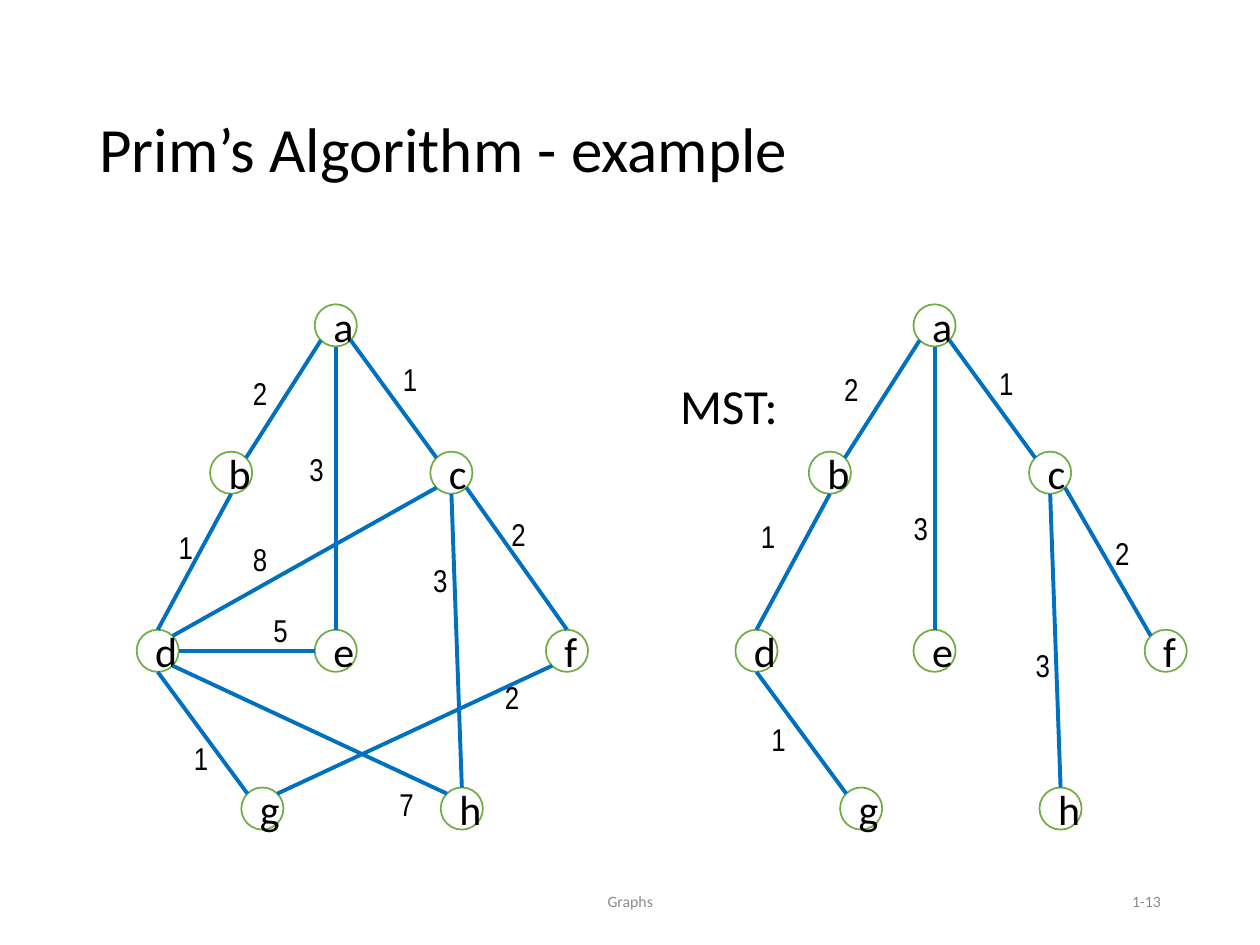
from math import cos, radians, sin

from lxml import etree
from pptx import Presentation
from pptx import util as u
from pptx.dml.color import RGBColor
from pptx.enum import shapes, text
from pptx.oxml import ns

BLACK = RGBColor(0x00, 0x00, 0x00)
WHITE = RGBColor(0xFF, 0xFF, 0xFF)
GRAY = RGBColor(0x8C, 0x8C, 0x8C)
GREEN = RGBColor(0x70, 0xAD, 0x47)
BLUE = RGBColor(0x00, 0x70, 0xC0)

DIAMETER = 0.85
MST_OFFSET = 12.07
LEFT, CENTER, RIGHT = text.PP_ALIGN.LEFT, text.PP_ALIGN.CENTER, text.PP_ALIGN.RIGHT
MIDDLE = text.MSO_ANCHOR.MIDDLE

NODES = {
    "a": (6.77, 6.56),
    "b": (4.66, 9.53),
    "c": (9.1, 9.53),
    "d": (3.18, 13.12),
    "e": (6.77, 13.12),
    "f": (11.43, 13.12),
    "g": (5.29, 16.3),
    "h": (9.31, 16.3),
}
ANGLES = {name: 45 * step for step, name in enumerate(("E", "SE", "S", "SW", "W", "NW", "N", "NE"))}

GRAPH_EDGES = [
    ("a", "SE", "c", "NW", "1", 7.87, 7.14),
    ("a", "SW", "b", "NE", "2", 4.85, 7.42),
    ("a", "S", "e", "N", "3", 5.99, 8.94),
    ("b", "S", "d", "N", "1", 3.35, 10.52),
    ("c", "SE", "f", "N", "2", 10.06, 10.26),
    ("c", "SW", "d", "NE", "8", 4.85, 10.77),
    ("c", "S", "h", "N", "3", 8.48, 11.18),
    ("e", "W", "d", "E", "5", 5.26, 12.19),
    ("d", "S", "g", "NW", "1", 3.66, 14.78),
    ("d", "SE", "h", "NW", "7", 7.8, 15.7),
    ("f", "SW", "g", "NE", "2", 9.93, 13.54),
]
MST_EDGES = [
    ("a", "SE", "c", "NW", "1", 7.82, 7.21),
    ("a", "SW", "b", "NE", "2", 4.7, 7.34),
    ("a", "S", "e", "N", "3", 6.1, 10.13),
    ("b", "S", "d", "N", "1", 3.02, 10.29),
    ("c", "SE", "f", "NW", "2", 10.16, 10.64),
    ("c", "S", "h", "N", "3", 8.56, 12.9),
    ("d", "S", "g", "NW", "1", 3.23, 14.4),
]


def write(frame, words, size, font="Calibri", color=BLACK, align=LEFT):
    frame.text = words
    para = frame.paragraphs[0]
    para.alignment = align
    span = para.runs[0]
    span.font.size = u.Pt(size)
    span.font.name = font
    span.font.color.rgb = color
    return para


def add_title(page, words):
    title = page.shapes.title
    title.left, title.top, title.width, title.height = map(u.Cm, (1.75, 1.02, 21.9, 3.68))
    frame = title.text_frame
    frame.auto_size = text.MSO_AUTO_SIZE.NONE
    frame.vertical_anchor = MIDDLE
    para = write(frame, words, 36)
    para.line_spacing = 1.15
    para.space_before = u.Pt(6)


def add_label(page, words, place, size, **style):
    box = page.shapes.add_textbox(*map(u.Cm, place))
    box.text_frame.word_wrap = False
    write(box.text_frame, words, size, **style)
    return box


def add_footer(page, words, left, width, align):
    box = add_label(page, words, (left, 17.65, width, 1.02), 9, color=GRAY, align=align)
    box.text_frame.word_wrap = True
    box.text_frame.vertical_anchor = MIDDLE


def add_node(page, name, offset):
    x, y = NODES[name]
    radius = DIAMETER / 2
    place = (x + offset - radius, y - radius, DIAMETER, DIAMETER)
    node = page.shapes.add_shape(shapes.MSO_SHAPE.OVAL, *map(u.Cm, place))
    node.shadow.inherit = False
    node.fill.solid()
    node.fill.fore_color.rgb = WHITE
    node.line.color.rgb = GREEN
    node.line.width = u.Pt(1)
    node.text_frame.vertical_anchor = MIDDLE
    write(node.text_frame, name, 24, align=CENTER)


def rim_point(name, side, offset):
    x, y = NODES[name]
    angle = radians(ANGLES[side])
    radius = DIAMETER / 2
    return u.Cm(x + offset + radius * cos(angle)), u.Cm(y + radius * sin(angle))


def add_edge(page, start, start_side, end, end_side, offset):
    edge = page.shapes.add_connector(
        shapes.MSO_CONNECTOR.STRAIGHT,
        *rim_point(start, start_side, offset),
        *rim_point(end, end_side, offset),
    )
    edge.line.color.rgb = BLUE
    edge.line.width = u.Pt(2.25)
    etree.SubElement(edge._element.spPr, ns.qn("a:effectLst"))


def add_graph(page, edges, offset):
    for name in NODES:
        add_node(page, name, offset)
    for start, start_side, end, end_side, weight, left, top in edges:
        add_edge(page, start, start_side, end, end_side, offset)
        add_label(page, weight, (left + offset, top, 0.82, 1.02), 18, font="Arial Narrow")


def main():
    deck = Presentation()
    deck.slide_width, deck.slide_height = u.Cm(25.4), u.Cm(19.05)
    page = deck.slides.add_slide(deck.slide_layouts[5])
    add_title(page, "Prim’s Algorithm - example")
    add_footer(page, "Graphs", 8.41, 8.59, CENTER)
    add_footer(page, "1-13", 17.93, 5.72, RIGHT)
    add_label(page, "MST:", (13.46, 7.44, 2.51, 1.45), 28)
    add_graph(page, GRAPH_EDGES, 0)
    add_graph(page, MST_EDGES, MST_OFFSET)
    deck.save("out.pptx")


if __name__ == "__main__":
    main()
